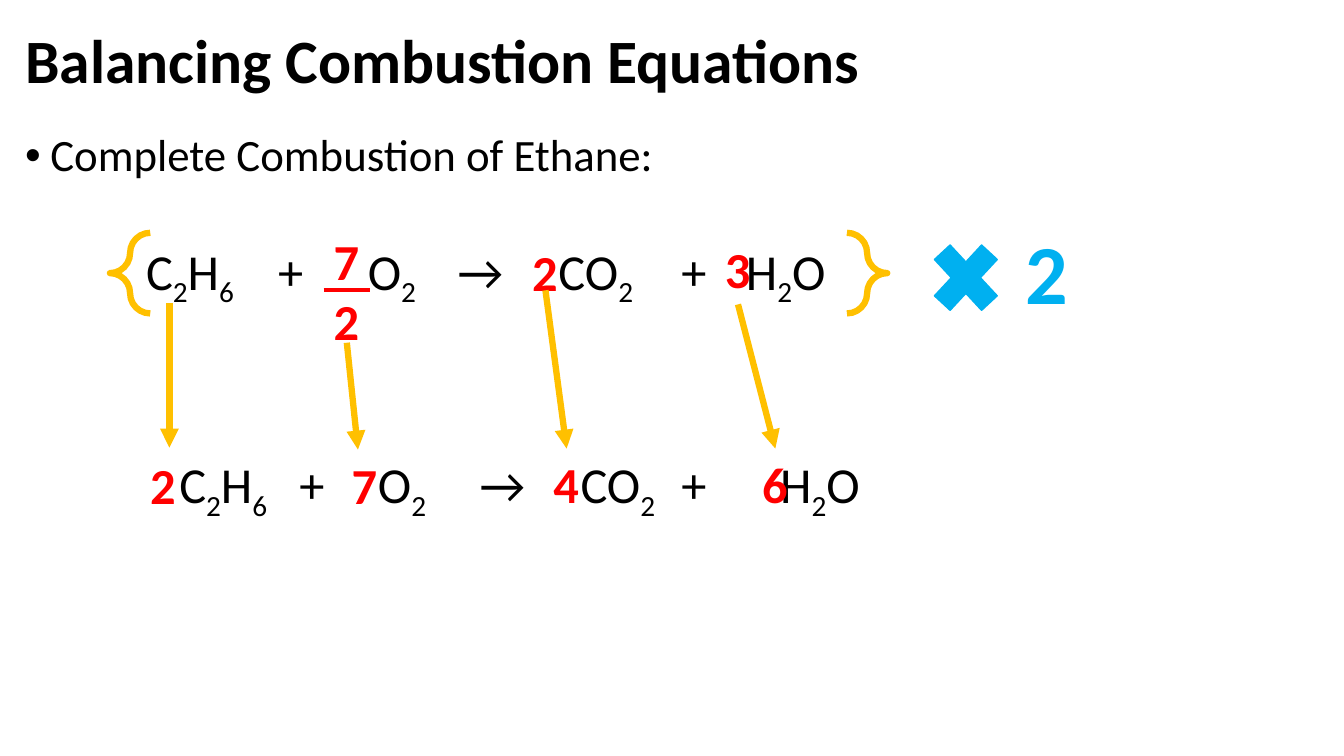
from itertools import groupby

from lxml.etree import SubElement
from pptx import Presentation
from pptx.dml.color import RGBColor
from pptx.enum.shapes import MSO_CONNECTOR, MSO_SHAPE
from pptx.enum.text import MSO_ANCHOR, MSO_AUTO_SIZE, PP_ALIGN
from pptx.oxml.ns import qn
from pptx.util import Inches, Pt

BLACK = RGBColor(0x00, 0x00, 0x00)
RED = RGBColor(0xFF, 0x00, 0x00)
GOLD = RGBColor(0xFF, 0xC0, 0x00)
BLUE = RGBColor(0x00, 0xB0, 0xF0)
FONT = "Calibri"


class EquationSlide:
    def __init__(self, prs):
        self.s = prs.slides.add_slide(prs.slide_layouts[5])

    def place(self, sp, left, top, width, height):
        sp.left, sp.top = Inches(left), Inches(top)
        sp.width, sp.height = Inches(width), Inches(height)

    def run(self, p, text, size, color=BLACK, bold=False):
        r = p.add_run()
        r.text = text
        r.font.name, r.font.size, r.font.bold = FONT, Pt(size), bold
        r.font.color.rgb = color
        return r

    def title(self, text, *box):
        sp = self.s.shapes.title
        self.place(sp, *box)
        tf = sp.text_frame
        tf.vertical_anchor = MSO_ANCHOR.MIDDLE
        tf.auto_size = MSO_AUTO_SIZE.NONE
        p = tf.paragraphs[0]
        p.alignment, p.line_spacing = PP_ALIGN.LEFT, 0.9
        self.run(p, text, 44, bold=True)

    def text_box(self, *box, wrap=True):
        sp = self.s.shapes.add_textbox(*map(Inches, box))
        sp.text_frame.word_wrap = wrap
        sp.text_frame.auto_size = MSO_AUTO_SIZE.SHAPE_TO_FIT_TEXT
        return sp

    def bullet(self, text, *box):
        p = self.text_box(*box).text_frame.paragraphs[0]
        p.line_spacing, p.space_before = 0.9, Pt(10)
        pPr = p._p.get_or_add_pPr()
        pPr.set("marL", str(Inches(0.25)))
        pPr.set("indent", str(-Inches(0.25)))
        SubElement(pPr, qn("a:buFont"), typeface="Arial")
        SubElement(pPr, qn("a:buChar"), char="•")
        self.run(p, text, 32)

    def equation(self, text, stops, *box):
        """Write a formula whose digits are subscripts, with tab stops in inches."""
        p = self.text_box(*box).text_frame.paragraphs[0]
        tabs = SubElement(p._p.get_or_add_pPr(), qn("a:tabLst"))
        for stop in stops:
            SubElement(tabs, qn("a:tab"), pos=str(Inches(stop)), algn="l")
        for is_digit, chars in groupby(text, str.isdigit):
            r = self.run(p, "".join(chars), 36)
            if is_digit:
                r.font._element.set("baseline", "-25000")

    def number(self, lines, left, top, width=0.46, height=0.71, size=36, color=RED):
        sp = self.text_box(left, top, width, height, wrap=False)
        tf = sp.text_frame
        for i, line in enumerate(lines):
            p = tf.add_paragraph() if i else tf.paragraphs[0]
            self.run(p, line, size, color, bold=True)
        return sp

    def line(self, start, end, color, width):
        cx = self.s.shapes.add_connector(
            MSO_CONNECTOR.STRAIGHT, *map(Inches, (*start, *end)))
        cx.line.color.rgb, cx.line.width = color, Pt(width)
        SubElement(cx._element.spPr, qn("a:effectLst"))
        return cx

    def arrow(self, start, end, source=None, target=None):
        cx = self.line(start, end, GOLD, 4.5)
        SubElement(cx.line._get_or_add_ln(), qn("a:tailEnd"), type="triangle")
        if source is not None:
            cx.begin_connect(source, 2)
        if target is not None:
            cx.end_connect(target, 0)

    def shape(self, kind, *box, color, width, filled=False):
        sp = self.s.shapes.add_shape(kind, *map(Inches, box))
        sp.shadow.inherit = False
        sp.line.color.rgb, sp.line.width = color, Pt(width)
        if filled:
            sp.fill.solid()
            sp.fill.fore_color.rgb = color
        else:
            sp.fill.background()
        return sp


def main():
    prs = Presentation()
    prs.slide_width, prs.slide_height = Inches(13.33), Inches(7.5)
    slide = EquationSlide(prs)
    slide.title("Balancing Combustion Equations", 0.15, 0.18, 9.59, 0.9)
    slide.bullet("Complete Combustion of Ethane:", 0.15, 1.27, 8.01, 0.65)

    reaction = "C2H6\t+\tO2\t→\tCO2\t+\tH2O"
    slide.equation(reaction, (1.31, 2.2, 3.09, 4.09, 5.31, 5.95),
                   1.35, 2.33, 10.18, 0.71)
    slide.equation(reaction, (1.19, 1.97, 2.98, 3.98, 4.98, 5.96),
                   1.68, 4.45, 8.33, 0.71)

    slide.number("2", 5.18, 2.34)
    water = slide.number("3", 7.09, 2.31)
    fraction = slide.number("72", 3.21, 2.23, height=1.31)
    bar = slide.line((3.21, 2.88), (3.67, 2.88), RED, 3)
    slide.s.shapes.add_group_shape([fraction, bar])

    slide.number("2", 1.39, 4.46)
    slide.number("7", 3.39, 4.46)
    doubled_dioxide = slide.number("4", 5.39, 4.45)
    doubled_water = slide.number("6", 7.46, 4.45)

    braces = slide.shape(MSO_SHAPE.DOUBLE_BRACE, 1.09, 2.31, 7.71, 0.8,
                         color=GOLD, width=4.5)
    braces.adjustments[0] = 0.25
    slide.shape(MSO_SHAPE.MATH_MULTIPLY, 9.13, 2.27, 0.9, 0.97,
                color=BLUE, width=1, filled=True)
    slide.number("2", 10.07, 2.14, 0.63, 1.11, size=60, color=BLUE)

    slide.arrow((1.68, 3.01), (1.68, 4.44))
    slide.arrow((3.44, 3.4), (3.55, 4.46))
    slide.arrow((5.41, 2.88), (5.62, 4.45), target=doubled_dioxide)
    slide.arrow((7.32, 3.02), (7.69, 4.45), source=water, target=doubled_water)
    prs.save("out.pptx")


if __name__ == "__main__":
    main()
